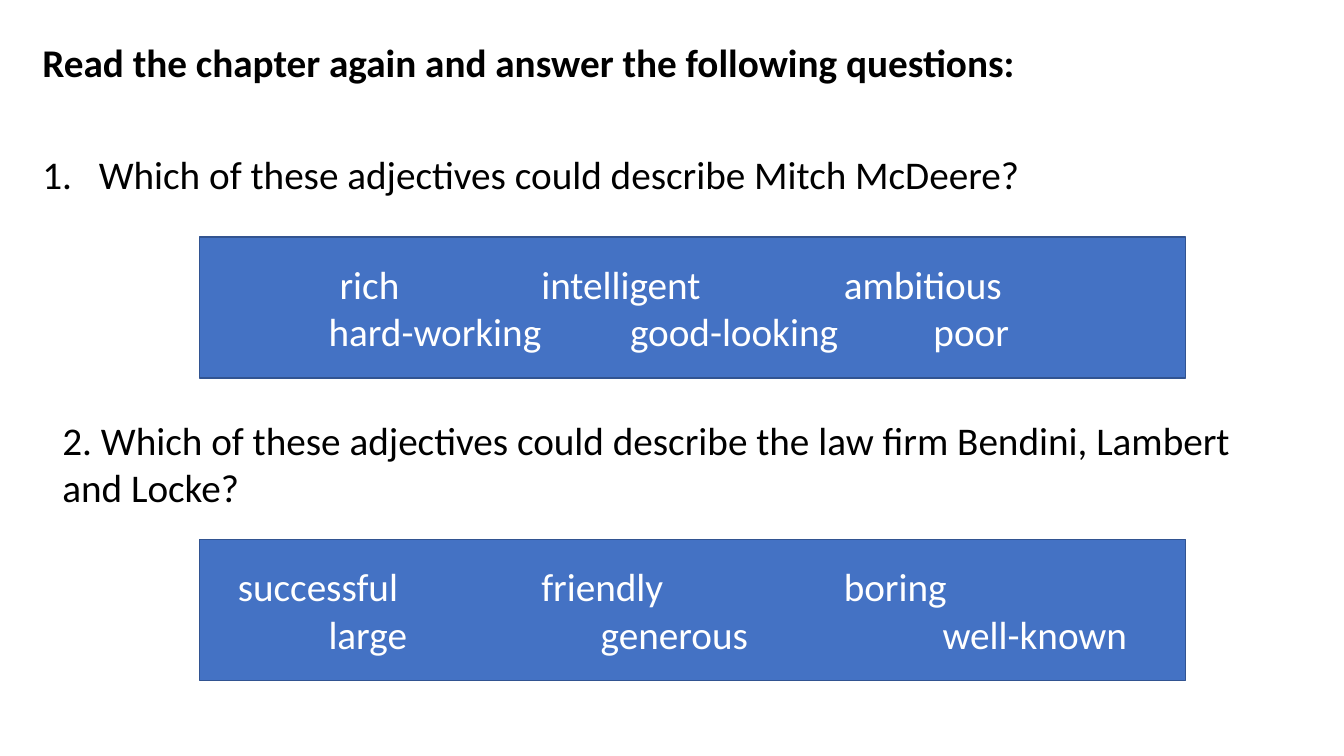
from dataclasses import dataclass

import pptx
import pptx.dml.color
import pptx.enum.shapes
import pptx.enum.text
import pptx.oxml.ns
import pptx.shapes.autoshape
import pptx.slide
import pptx.text.text
import pptx.util
from lxml import etree
from pptx.util import Inches

BLACK = pptx.dml.color.RGBColor(0x00, 0x00, 0x00)
WHITE = pptx.dml.color.RGBColor(0xFF, 0xFF, 0xFF)
BLUE = pptx.dml.color.RGBColor(0x44, 0x72, 0xC4)
DARK_BLUE = pptx.dml.color.RGBColor(0x32, 0x54, 0x91)


@dataclass
class WordRow:
    words: list[str]
    stops: list[float]  # inches from the text edge of the box


@dataclass
class WordBox:
    top: float
    rows: list[WordRow]


WORD_BOXES = [
    WordBox(2.35, [
        WordRow(["rich", "intelligent", "ambitious"], [1.29, 3.29, 6.29]),
        WordRow(["hard-working", "good-looking", "poor"], [1.18, 4.17, 7.18]),
    ]),
    WordBox(5.35, [
        WordRow(["successful", "friendly", "boring"], [0.28, 3.29, 6.29]),
        WordRow(["large", "generous", "well-known"], [1.18, 3.88, 7.27]),
    ]),
]


def add_ppr_child(p: pptx.text.text._Paragraph, tag: str) -> etree._Element:
    return etree.SubElement(p._p.get_or_add_pPr(), pptx.oxml.ns.qn(tag))


def format_text(p: pptx.text.text._Paragraph,
                color: pptx.dml.color.RGBColor, bold: bool = False) -> None:
    p.alignment = pptx.enum.text.PP_ALIGN.LEFT
    for r in p.runs:
        r.font.name = "Calibri"
        r.font.size = pptx.util.Pt(28)
        r.font.bold = bold
        r.font.color.rgb = color


def fill_text(sp: pptx.shapes.autoshape.Shape, text: str,
              box: tuple[float, float, float, float],
              bold: bool = False) -> pptx.text.text._Paragraph:
    """Place a text shape and give it one black paragraph."""
    sp.left, sp.top, sp.width, sp.height = map(Inches, box)
    tf = sp.text_frame
    tf.word_wrap = True
    tf.auto_size = pptx.enum.text.MSO_AUTO_SIZE.NONE
    tf.vertical_anchor = pptx.enum.text.MSO_ANCHOR.TOP
    p = tf.paragraphs[0]
    p.text = text
    p.space_before = pptx.util.Pt(0)
    format_text(p, BLACK, bold)
    return p


def number_paragraph(p: pptx.text.text._Paragraph) -> None:
    ppr = p._p.get_or_add_pPr()
    ppr.set("marL", str(Inches(0.56)))
    ppr.set("indent", str(-Inches(0.56)))
    add_ppr_child(p, "a:buFont").set("typeface", "+mj-lt")
    add_ppr_child(p, "a:buAutoNum").set("type", "arabicPeriod")


def add_word_box(s: pptx.slide.Slide, box: WordBox) -> None:
    sp = s.shapes.add_shape(pptx.enum.shapes.MSO_SHAPE.RECTANGLE, Inches(1.98),
                            Inches(box.top), Inches(9.78), Inches(1.4))
    sp.shadow.inherit = False
    sp.fill.solid()
    sp.fill.fore_color.rgb = BLUE
    sp.line.color.rgb = DARK_BLUE
    sp.line.width = pptx.util.Pt(1)
    tf = sp.text_frame
    tf.word_wrap = True
    tf.vertical_anchor = pptx.enum.text.MSO_ANCHOR.MIDDLE
    for i, row in enumerate(box.rows):
        p = tf.add_paragraph() if i else tf.paragraphs[0]
        p.text = "".join("\t" + word for word in row.words)
        tabs = add_ppr_child(p, "a:tabLst")
        for stop in row.stops:
            tab = etree.SubElement(tabs, pptx.oxml.ns.qn("a:tab"))
            tab.set("pos", str(Inches(stop)))
            tab.set("algn", "l")
        format_text(p, WHITE)


def main() -> None:
    prs = pptx.Presentation()
    prs.slide_width, prs.slide_height = Inches(13.33), Inches(7.5)
    s = prs.slides.add_slide(prs.slide_layouts[1])

    heading = fill_text(s.shapes.title,
                        "Read the chapter again and answer the following questions:",
                        (0.32, 0.38, 12.51, 0.6), bold=True)
    heading.line_spacing = 0.9

    question = fill_text(s.placeholders[1],
                         "Which of these adjectives could describe Mitch McDeere?",
                         (0.32, 1.49, 12.51, 0.6))
    question.line_spacing = 0.9
    number_paragraph(question)

    second_box = (0.52, 4.08, 12.35, 1.04)
    fill_text(s.shapes.add_textbox(*map(Inches, second_box)),
              "2. Which of these adjectives could describe the law firm "
              "Bendini, Lambert and Locke?", second_box)

    for box in WORD_BOXES:
        add_word_box(s, box)
    prs.save("out.pptx")


if __name__ == "__main__":
    main()
